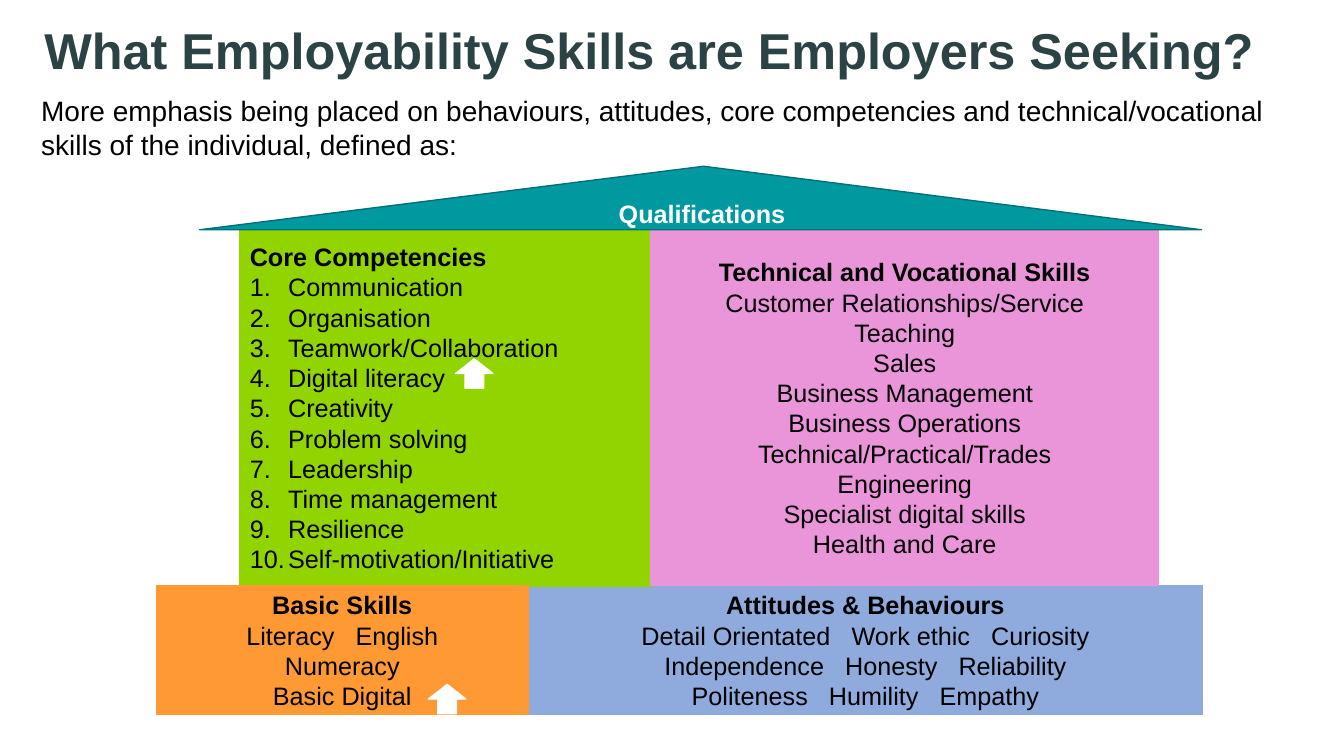
import pptx
import pptx.util
from lxml import etree
from pptx.dml.color import RGBColor
from pptx.enum.shapes import MSO_SHAPE
from pptx.enum.text import MSO_ANCHOR, MSO_AUTO_SIZE, PP_ALIGN
from pptx.oxml.ns import qn

WIDE = pptx.util.Inches(13.33)
HIGH = pptx.util.Inches(7.5)

BLACK = RGBColor(0x00, 0x00, 0x00)
WHITE = RGBColor(0xFF, 0xFF, 0xFF)
SLATE = RGBColor(0x2B, 0x43, 0x45)
GREEN = RGBColor(0x92, 0xD4, 0x00)
PINK = RGBColor(0xEA, 0x95, 0xDA)
ORANGE = RGBColor(0xFF, 0x99, 0x33)
BLUE = RGBColor(0x8F, 0xAA, 0xDC)
TEAL = RGBColor(0x00, 0x99, 0xA0)
DARK = RGBColor(0x00, 0x71, 0x76)

CORE = ["Communication", "Organisation", "Teamwork/Collaboration",
        "Digital literacy", "Creativity", "Problem solving", "Leadership",
        "Time management", "Resilience", "Self-motivation/Initiative"]
TRADES = ["Customer Relationships/Service", "Teaching", "Sales",
          "Business Management", "Business Operations",
          "Technical/Practical/Trades", "Engineering",
          "Specialist digital skills", "Health and Care"]
# Terms that share a line are parted by a bar.
BASICS = ["Literacy|English", "Numeracy", "Basic Digital"]
TRAITS = ["Detail Orientated|Work ethic|Curiosity",
          "Independence|Honesty|Reliability",
          "Politeness|Humility|Empathy"]


def area(left, top, width, height):
    """Turn percentages of the slide into lengths."""
    return (int(WIDE * left / 100), int(HIGH * top / 100),
            int(WIDE * width / 100), int(HIGH * height / 100))


def style(para, size, color=BLACK, bold=False, align=PP_ALIGN.LEFT):
    para.alignment = align
    para.font.name = "Arial"
    para.font.size = pptx.util.Pt(size)
    para.font.bold = bold
    para.font.color.rgb = color


def number(para):
    """Number a paragraph with a hanging indent."""
    props = para._p.get_or_add_pPr()
    hang = pptx.util.Inches(0.38)
    props.set("marL", str(hang))
    props.set("indent", str(-hang))
    etree.SubElement(props, qn("a:buFont"), typeface="+mj-lt")
    etree.SubElement(props, qn("a:buAutoNum"), type="arabicPeriod")


def write_terms(para, line):
    """Write the terms of a line with a wide space between them."""
    for index, term in enumerate(line.split("|")):
        if index:
            gap = para.add_run()
            gap.text = " "
            gap._r.get_or_add_rPr().set("spc", "1000")
        para.add_run().text = term


def add_form(slide, kind, place, fill, edge=None):
    form = slide.shapes.add_shape(kind, *area(*place))
    form.shadow.inherit = False
    form.fill.solid()
    form.fill.fore_color.rgb = fill
    form.line.color.rgb = edge or fill
    form.line.width = pptx.util.Pt(1)
    return form


def add_block(slide, place, fill, head, lines, listed=False):
    """Add a coloured block with a bold heading above its lines."""
    block = add_form(slide, MSO_SHAPE.RECTANGLE, place, fill)
    align = PP_ALIGN.LEFT if listed else PP_ALIGN.CENTER
    frame = block.text_frame
    frame.vertical_anchor = MSO_ANCHOR.MIDDLE
    first = frame.paragraphs[0]
    first.text = head
    style(first, 18, bold=True, align=align)
    for line in lines:
        para = frame.add_paragraph()
        if listed:
            number(para)
        write_terms(para, line)
        style(para, 18, align=align)


def add_roof(slide):
    roof = add_form(slide, MSO_SHAPE.ISOSCELES_TRIANGLE,
                    (14.85, 22, 74.55, 8.4), TEAL, DARK)
    roof.adjustments[0] = 0.503
    roof.text_frame.vertical_anchor = MSO_ANCHOR.MIDDLE
    para = roof.text_frame.paragraphs[0]
    para.text = "Qualifications"
    style(para, 18, WHITE, True, PP_ALIGN.CENTER)


def add_arrow(slide, left, top):
    arrow = add_form(slide, MSO_SHAPE.DOWN_ARROW,
                     (left, top, 2.78, 3.87), WHITE)
    arrow.rotation = 180


def set_title(slide):
    title = slide.shapes.title
    title.left, title.top, title.width, title.height = area(
        2.55, -2.67, 94.95, 19.33)
    frame = title.text_frame
    frame.auto_size = MSO_AUTO_SIZE.NONE
    frame.vertical_anchor = MSO_ANCHOR.MIDDLE
    para = frame.paragraphs[0]
    para.text = "What Employability Skills are Employers Seeking?"
    para.line_spacing = 0.9
    style(para, 36, SLATE, True)


def add_intro(slide):
    frame = slide.shapes.add_textbox(
        *area(2.32, 11.73, 93.15, 10.27)).text_frame
    frame.word_wrap = True
    frame.auto_size = MSO_AUTO_SIZE.SHAPE_TO_FIT_TEXT
    para = frame.paragraphs[0]
    para.text = ("More emphasis being placed on behaviours, attitudes, core "
                 "competencies and technical/vocational skills of the "
                 "individual, defined as:")
    style(para, 20)


def main():
    deck = pptx.Presentation()
    deck.slide_width, deck.slide_height = WIDE, HIGH
    slide = deck.slides.add_slide(deck.slide_layouts.get_by_name("Title Only"))
    set_title(slide)
    add_intro(slide)
    add_block(slide, (39.3, 77.47, 50.18, 17.07), BLUE,
              "Attitudes & Behaviours", TRAITS)
    add_block(slide, (17.85, 30.27, 30.68, 47.33), GREEN,
              "Core Competencies", CORE, listed=True)
    add_block(slide, (11.63, 77.47, 27.67, 17.07), ORANGE,
              "Basic Skills", BASICS)
    add_block(slide, (48.45, 30.4, 37.73, 47.07), PINK,
              "Technical and Vocational Skills", TRADES)
    add_roof(slide)
    add_arrow(slide, 33.9, 47.47)
    add_arrow(slide, 31.88, 90.53)
    deck.save("out.pptx")


if __name__ == "__main__":
    main()
